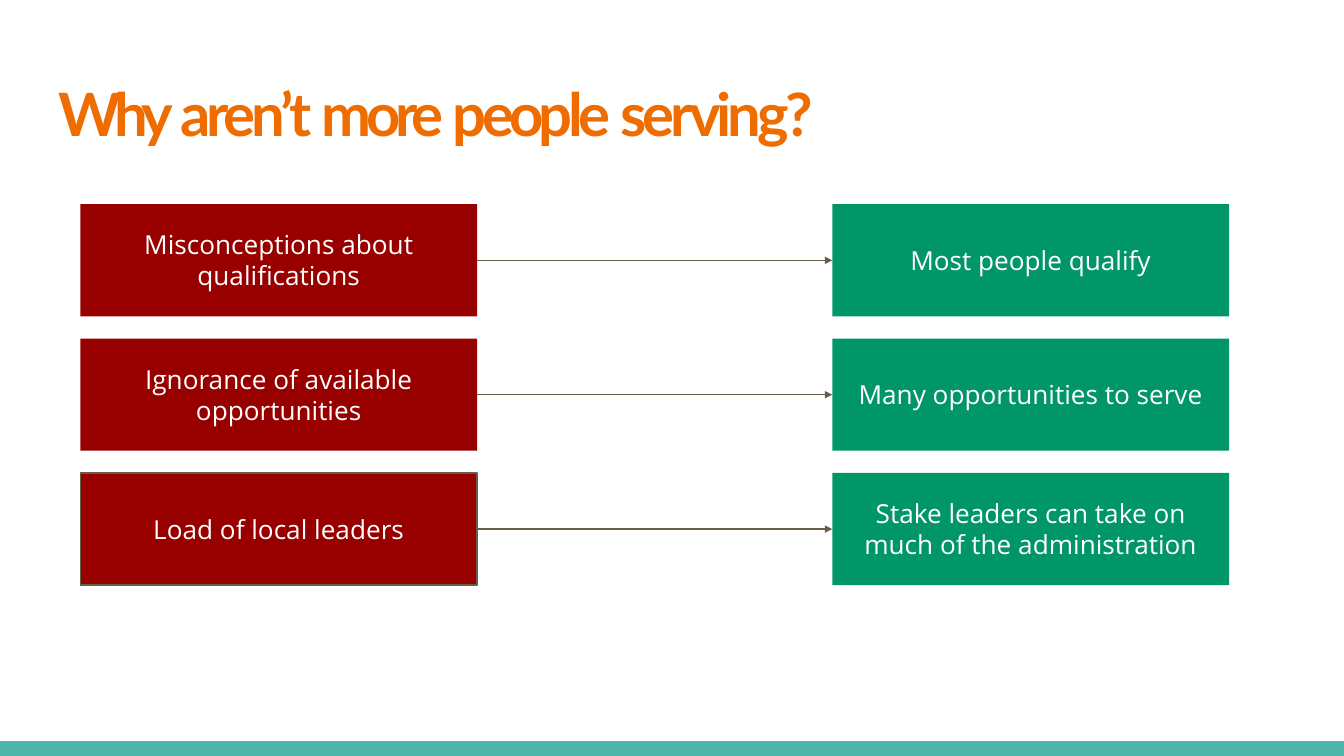
from lxml import etree
from pptx import Presentation
from pptx.dml.color import RGBColor
from pptx.enum.shapes import MSO_CONNECTOR as CONN, MSO_SHAPE as SHAPE
from pptx.enum.text import MSO_ANCHOR as ANCHOR, PP_ALIGN as ALIGN
from pptx.oxml.ns import qn
from pptx.util import Cm, Pt

# (word, letter spacing in hundredths of a point)
TITLE = [("Why ", -320), ("aren’t ", -220), ("more ", -290),
         ("people ", -250), ("serving?", -210)]
# (obstacle, answer)
ROWS = [
    ("Misconceptions about qualifications", "Most people qualify"),
    ("Ignorance of available opportunities", "Many opportunities to serve"),
    ("Load of local leaders", "Stake leaders can take on much of the administration"),
]
COLORS = {"title": "EE6C00", "obstacle": "980000", "answer": "009668",
          "line": "685D46", "footer": "4DB6AB", "text": "FFFFFF"}

WIDTH, HEIGHT = 25.4, 14.29
FOOTER_H = 0.28
LEFT_X, RIGHT_X = 1.52, 15.73
TOP, PITCH = 3.86, 2.54
BOX_W, BOX_H = 7.5, 2.12


def color(name):
    return RGBColor.from_string(COLORS[name])


def set_font(r, name, size, color_name):
    r.font.name = name
    r.font.size = Pt(size)
    r.font.color.rgb = color(color_name)


def add_rect(x, y, w, h, fill):
    sp = s.shapes.add_shape(SHAPE.RECTANGLE, Cm(x), Cm(y), Cm(w), Cm(h))
    sp.shadow.inherit = False
    sp.fill.solid()
    sp.fill.fore_color.rgb = color(fill)
    sp.line.fill.background()
    return sp


def add_box(x, y, text, fill):
    sp = add_rect(x, y, BOX_W, BOX_H, fill)
    tf = sp.text_frame
    tf.word_wrap = True
    tf.vertical_anchor = ANCHOR.MIDDLE
    tf.margin_left = tf.margin_right = Cm(0.38)
    tf.margin_top = tf.margin_bottom = 0
    p = tf.paragraphs[0]
    p.text = text
    p.alignment = ALIGN.CENTER
    p.line_spacing = Pt(16.5)
    set_font(p.runs[0], "Open Sans", 14, "text")
    return sp


def add_arrow(x1, x2, y):
    c = s.shapes.add_connector(CONN.STRAIGHT, Cm(x1), Cm(y), Cm(x2), Cm(y))
    c.line.color.rgb = color("line")
    c.line.width = Pt(0.75)
    etree.SubElement(c.line._get_or_add_ln(), qn("a:tailEnd"),
                     type="triangle", w="sm", len="sm")
    etree.SubElement(c._element.spPr, qn("a:effectLst"))


def add_title():
    sp = s.shapes.add_textbox(Cm(0.97), Cm(0.43), Cm(16.03), Cm(2.39))
    tf = sp.text_frame
    tf.word_wrap = True
    tf.margin_left, tf.margin_top = Cm(0.13), Cm(1.02)
    tf.margin_right = tf.margin_bottom = 0
    p = tf.paragraphs[0]
    p.space_before = Pt(1.4)
    for word, spacing in TITLE:
        r = p.add_run()
        r.text = word
        set_font(r, "Lato", 32, "title")
        r.font.bold = True
        r._r.get_or_add_rPr().set("spc", str(spacing))


prs = Presentation()
prs.slide_width, prs.slide_height = Cm(WIDTH), Cm(HEIGHT)
s = prs.slides.add_slide(prs.slide_layouts[6])

add_rect(0, HEIGHT - FOOTER_H, WIDTH, FOOTER_H, "footer")
add_title()
for i, (obstacle, answer) in enumerate(ROWS):
    y = TOP + i * PITCH
    box = add_box(LEFT_X, y, obstacle, "obstacle")
    if i == len(ROWS) - 1:
        box.line.color.rgb = color("line")
        box.line.width = Pt(0.75)
    add_box(RIGHT_X, y, answer, "answer")
    add_arrow(LEFT_X + BOX_W, RIGHT_X, y + BOX_H / 2)

prs.save("out.pptx")
